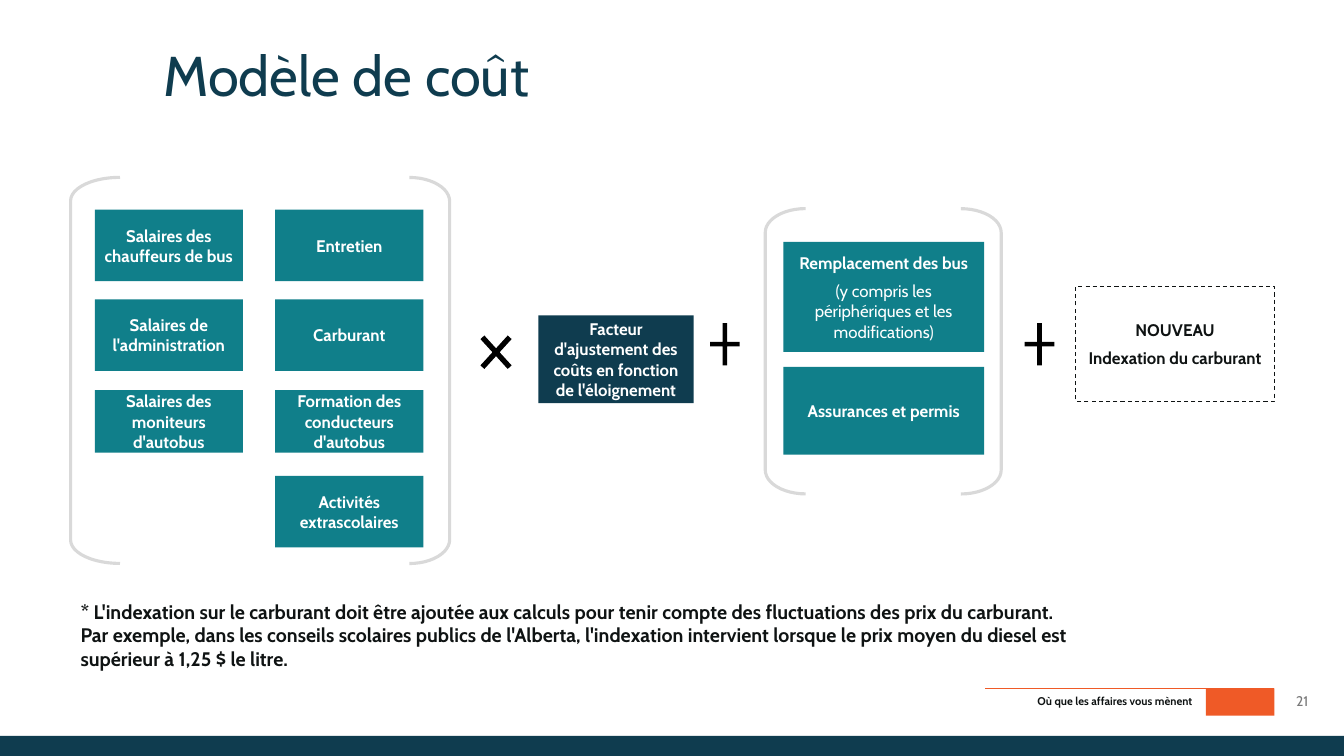
from pptx import Presentation
from pptx.dml.color import RGBColor
from pptx.enum.dml import MSO_LINE
from pptx.enum.shapes import MSO_CONNECTOR, MSO_SHAPE
from pptx.enum.text import MSO_ANCHOR, PP_ALIGN
from pptx.oxml.ns import qn
from pptx.util import Inches, Pt
from lxml import etree

FONT = "Cabin"
NAVY, TEAL, ORANGE = "0F3C4F", "107F8A", "EF5A27"
INK, WHITE, BLACK = "0F1313", "FFFFFF", "000000"
BRACKET_GREY, NUMBER_GREY = "D9D9D9", "797979"


def rgb(color):
    return RGBColor.from_string(color)


def place(sp, box):
    sp.left, sp.top, sp.width, sp.height = [Inches(v) for v in box]


def write(sp, paragraphs, size, color, align=PP_ALIGN.LEFT, anchor=MSO_ANCHOR.TOP,
          insets=(0.1, 0.05)):
    """Fill a shape with (text, bold) paragraphs; insets are horizontal, vertical."""
    tf = sp.text_frame
    tf.word_wrap = True
    tf.vertical_anchor = anchor
    tf.margin_left = tf.margin_right = Inches(insets[0])
    tf.margin_top = tf.margin_bottom = Inches(insets[1])
    for i, (text, bold) in enumerate(paragraphs):
        p = tf.add_paragraph() if i else tf.paragraphs[0]
        p.alignment = align
        if i:
            p.space_before = Pt(6)
        r = p.add_run()
        r.text = text
        r.font.name = FONT
        r.font.size = Pt(size)
        r.font.bold = bold
        r.font.color.rgb = rgb(color)
    return tf


def add_text(s, box, text, size, color, bold=True, **layout):
    sp = s.shapes.add_textbox(*[Inches(v) for v in box])
    write(sp, [(text, bold)], size, color, **layout)


def add_shape(s, kind, box, fill=None, adj=None):
    sp = s.shapes.add_shape(kind, *[Inches(v) for v in box])
    sp.shadow.inherit = False
    sp.line.fill.background()
    if fill:
        sp.fill.solid()
        sp.fill.fore_color.rgb = rgb(fill)
    else:
        sp.fill.background()
    if adj is not None:
        sp.adjustments[0] = adj
    return sp


def add_box(s, box, paragraphs, fill=TEAL, color=WHITE):
    sp = add_shape(s, MSO_SHAPE.RECTANGLE, box, fill)
    write(sp, paragraphs, 12, color, PP_ALIGN.CENTER, MSO_ANCHOR.MIDDLE)
    return sp


def add_brackets(s, box, left=(0.4, 0.594), right=(0.4, 0.594)):
    """Enclose a box; left and right are (width, curvature) of each bracket."""
    x, y, w, h = box
    for bx, (bw, adj), turn in ((x, left, 0), (x + w - right[0], right, 180)):
        sp = add_shape(s, MSO_SHAPE.LEFT_BRACKET, (bx, y, bw, h), adj=adj)
        sp.rotation = turn
        sp.line.color.rgb = rgb(BRACKET_GREY)
        sp.line.width = Pt(2.25)


def add_title(s, box):
    title = s.shapes.title
    place(title, box)
    tf = write(title, [("Modèle de coût", False)], 40, NAVY, insets=(0, 0))
    tf.paragraphs[0].line_spacing = 0.9


def add_operating_costs(s, box):
    x, y, w, h = box
    add_brackets(s, box, left=(0.49, 0.474))
    rows = ((0.32, 0.71), (1.21, 0.71), (2.11, 0.62), (2.96, 0.71))
    columns = (
        (0.24, ("Salaires des chauffeurs de bus", "Salaires de l'administration",
                "Salaires des moniteurs d'autobus")),
        (2.03, ("Entretien", "Carburant", "Formation des conducteurs d'autobus",
                "Activités extrascolaires")),
    )
    for dx, labels in columns:
        for label, (dy, row_h) in zip(labels, rows):
            add_box(s, (x + dx, y + dy, 1.47, row_h), [(label, True)])


def add_bus_costs(s, box):
    x, y, w, h = box
    add_brackets(s, box)
    add_box(s, (x + 0.18, y + 0.33, 1.99, 1.09),
            [("Remplacement des bus", True),
             ("(y compris les périphériques et les modifications)", False)])
    add_box(s, (x + 0.18, y + 1.57, 1.99, 0.87), [("Assurances et permis", True)])


def add_fuel_indexation(s, box):
    sp = add_box(s, box, [("NOUVEAU", True), ("Indexation du carburant", True)],
                 fill=None, color=INK)
    sp.line.color.rgb = rgb(INK)
    sp.line.width = Pt(0.75)
    sp.line.dash_style = MSO_LINE.DASH


def add_formula(s, box):
    x, y, w, h = box
    add_operating_costs(s, (x, y, 3.76, h))
    add_shape(s, MSO_SHAPE.MATH_MULTIPLY, (x + 3.96, y + 1.45, 0.52, 0.57), BLACK, 0.101)
    add_box(s, (x + 4.64, y + 1.37, 1.54, 0.87),
            [("Facteur d'ajustement des coûts en fonction de l'éloignement", True)], NAVY)
    for dx in (6.29, 9.41):
        add_shape(s, MSO_SHAPE.MATH_PLUS, (x + dx, y + 1.37, 0.4, 0.57), BLACK, 0.116)
    add_bus_costs(s, (x + 6.89, y + 0.31, 2.34, 2.83))
    add_fuel_indexation(s, (x + 9.97, y + 1.08, 1.97, 1.14))


def add_footer(s, box):
    x, y, w, h = box
    tight = (0, 0.05)
    add_shape(s, MSO_SHAPE.RECTANGLE, (0, y + 0.47, 13.33, 0.2), NAVY)
    add_shape(s, MSO_SHAPE.RECTANGLE, (x + 2.19, y, 0.68, h), ORANGE)
    rule = s.shapes.add_connector(MSO_CONNECTOR.STRAIGHT, Inches(x), Inches(y),
                                  Inches(x + 2.87), Inches(y))
    rule.line.color.rgb = rgb(ORANGE)
    rule.line.width = Pt(1)
    etree.SubElement(rule._element.spPr, qn("a:effectLst"))
    add_text(s, (x, y + 0.01, 2.06, 0.24), "Où que les affaires vous mènent", 8, INK,
             align=PP_ALIGN.RIGHT, insets=tight)
    add_text(s, (x + 2.87, y - 0.01, 0.55, h), "21", 10, NUMBER_GREY, bold=False,
             align=PP_ALIGN.CENTER, anchor=MSO_ANCHOR.MIDDLE, insets=tight)


def main():
    prs = Presentation()
    prs.slide_width, prs.slide_height = Inches(13.33), Inches(7.5)
    s = prs.slides.add_slide(prs.slide_layouts[5])
    add_footer(s, (9.77, 6.83, 3.42, 0.27))
    add_title(s, (1.62, 0.48, 11.71, 0.61))
    add_formula(s, (0.7, 1.76, 11.94, 3.83))
    add_text(s, (0.7, 5.9, 10.11, 0.57),
             "* L'indexation sur le carburant doit être ajoutée aux calculs pour tenir "
             "compte des fluctuations des prix du carburant. Par exemple, dans les conseils "
             "scolaires publics de l'Alberta, l'indexation intervient lorsque le prix moyen "
             "du diesel est supérieur à 1,25 $ le litre.", 14, INK)
    prs.save("out.pptx")


if __name__ == "__main__":
    main()
